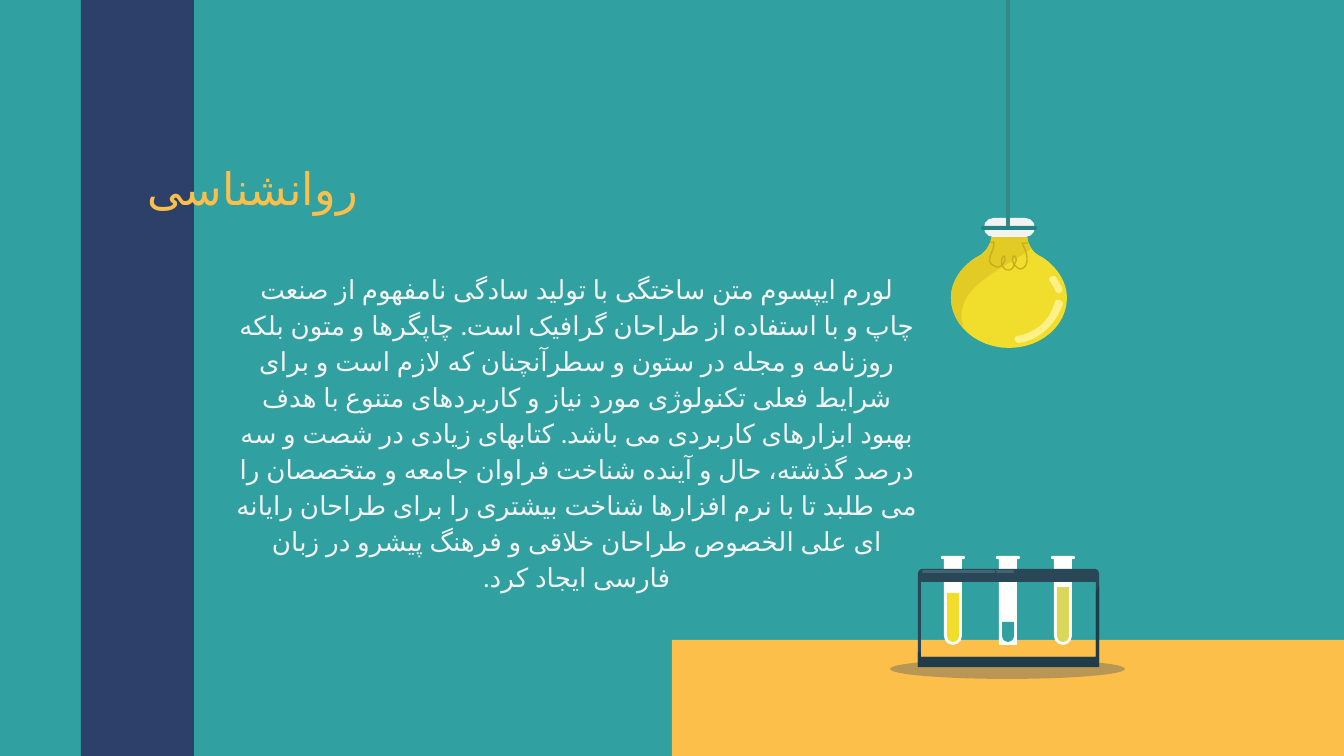
from lxml.etree import SubElement
from pptx import Presentation
from pptx.dml.color import RGBColor
from pptx.enum.lang import MSO_LANGUAGE_ID as LANGUAGE
from pptx.enum.shapes import MSO_CONNECTOR as CONNECTOR, MSO_SHAPE as SHAPE
from pptx.enum.text import MSO_ANCHOR as ANCHOR, MSO_AUTO_SIZE as AUTO_SIZE, PP_ALIGN as ALIGN
from pptx.oxml.ns import qn
from pptx.util import Emu, Inches, Pt

SCALE = 914400 / 134.4
CURVE_STEPS = 12

TEAL = RGBColor(0x30, 0xA0, 0xA0)
NAVY = RGBColor(0x2D, 0x40, 0x6A)
ORANGE = RGBColor(0xFC, 0xBF, 0x4A)
PALE = RGBColor(0xF3, 0xF3, 0xF3)
YELLOW = RGBColor(0xF1, 0xDE, 0x2C)
BULB_SHADE = RGBColor(0xE2, 0xCB, 0x24)
GLOSS = RGBColor(0xFF, 0xF1, 0x88)
FILAMENT = RGBColor(0xC4, 0xB0, 0x1E)
BAND = RGBColor(0x23, 0x84, 0x81)
CORD = RGBColor(0x33, 0x89, 0x87)
GLASS = RGBColor(0xFE, 0xFF, 0xFD)
OLIVE = RGBColor(0xDB, 0xD7, 0x5A)
RACK = RGBColor(0x2A, 0x47, 0x58)
RACK_DARK = RGBColor(0x20, 0x3C, 0x49)
RACK_LIGHT = RGBColor(0x44, 0x64, 0x75)

TITLE = "روانشناسی"
BODY = (
    "لورم ایپسوم متن ساختگی با تولید سادگی نامفهوم از صنعت چاپ و با استفاده از "
    "طراحان گرافیک است. چاپگرها و متون بلکه روزنامه و مجله در ستون و سطرآنچنان که "
    "لازم است و برای شرایط فعلی تکنولوژی مورد نیاز و کاربردهای متنوع با هدف بهبود "
    "ابزارهای کاربردی می باشد. کتابهای زیادی در شصت و سه درصد گذشته، حال و آینده "
    "شناخت فراوان جامعه و متخصصان را می طلبد تا با نرم افزارها شناخت بیشتری را برای "
    "طراحان رایانه ای علی الخصوص طراحان خلاقی و فرهنگ پیشرو در زبان فارسی ایجاد کرد."
)

# Outlines: a pair is a corner, six numbers are a Bézier curve.
BULB_LEFT = [(43, 15), (43, 25, 37, 35, 28, 39), (13, 48, 2, 63, 2, 80)]
BULB_OUTLINE = [(60, 130), (93, 130, 118, 107, 118, 80), (118, 63, 107, 48, 93, 39),
                (83, 35, 78, 25, 78, 15), *BULB_LEFT, (2, 107, 28, 130, 60, 130)]
SHADE_OUTLINE = [(15, 111), (0, 70, 54, 52, 82, 31), (79, 25, 78, 20, 78, 15),
                 *BULB_LEFT, (2, 92, 8, 102, 15, 111)]
LONG_GLOSS = [(70, 125), (91, 122, 107, 106, 114, 86), (114, 83, 111, 82, 110, 82),
              (109, 82, 107, 82, 106, 83), (102, 102, 87, 115, 68, 118),
              (64, 119, 66, 125, 70, 125)]
SHORT_GLOSS = [(110, 75), (113, 75, 114, 72, 113, 70), (111, 66, 109, 63, 107, 59),
               (106, 58, 105, 58, 105, 58), (102, 58, 99, 60, 101, 63),
               (103, 66, 105, 70, 107, 74), (107, 74, 108, 75, 110, 75)]
FILAMENT_WIRE = [(41, 24), (45, 24), (45, 28, 44, 32, 42, 36), (40, 42, 39, 46, 48, 49),
                 (50, 49, 52, 48, 53, 47), (52, 43, 53, 39, 55, 38),
                 (57, 39, 56, 45, 53, 47), (55, 51, 57, 52, 59, 52),
                 (62, 52, 65, 50, 65, 46), (63, 42, 63, 39, 65, 38),
                 (68, 39, 68, 44, 65, 46), (67, 49, 70, 51, 72, 51),
                 (80, 49, 80, 37, 73, 25), (79, 25)]
FRAME_OUTER = [(5, 13), (2, 13, 0, 15, 0, 18), (0, 111), (181, 111), (181, 18),
               (181, 15, 179, 13, 176, 13)]
FRAME_INNER = [(178, 26), (178, 101), (3, 101), (3, 26)]
FRAME_DARK = [(181, 30), (180, 31, 179, 33, 178, 35), (178, 101), (3, 101), (3, 96),
              (0, 96), (0, 111), (181, 111)]


def px(value):
    return Emu(round(value * SCALE))


def paint(shape, color):
    shape.shadow.inherit = False
    shape.fill.solid()
    shape.fill.fore_color.rgb = color
    shape.line.fill.background()
    return shape


def add_block(slide, kind, left, top, width, height, color, adjustments=()):
    block = slide.shapes.add_shape(kind, px(left), px(top), px(width), px(height))
    for index, value in enumerate(adjustments):
        block.adjustments[index] = value
    return paint(block, color)


def trace(outline):
    """Turn corners and curves into a list of points in EMU."""
    points = [outline[0]]
    for step in outline[1:]:
        if len(step) == 2:
            points.append(step)
            continue
        controls = [points[-1], step[:2], step[2:4], step[4:]]
        for index in range(1, CURVE_STEPS + 1):
            t = index / CURVE_STEPS
            weights = ((1 - t) ** 3, 3 * t * (1 - t) ** 2, 3 * t * t * (1 - t), t ** 3)
            points.append(tuple(sum(w * c[axis] for w, c in zip(weights, controls))
                                for axis in (0, 1)))
    return [(px(x), px(y)) for x, y in points]


def add_outline(slide, left, top, *outlines, closed=True):
    first, *others = [trace(outline) for outline in outlines]
    builder = slide.shapes.build_freeform(*first[0])
    builder.add_line_segments(first[1:], close=closed)
    for points in others:
        builder.move_to(*points[0])
        builder.add_line_segments(points[1:], close=closed)
    return builder.convert_to_shape(px(left), px(top))


def write(shape, text, size, font_name, color, align, anchor):
    frame = shape.text_frame
    frame_format = dict(word_wrap=True, auto_size=AUTO_SIZE.NONE, vertical_anchor=anchor)
    frame_format.update({f"margin_{side}": Inches(0.1)
                         for side in ("left", "top", "right", "bottom")})
    for name, value in frame_format.items():
        setattr(frame, name, value)
    paragraph = frame.paragraphs[0]
    paragraph.alignment = align
    run = paragraph.add_run()
    run.text = text
    font_format = dict(size=Pt(size), name=font_name, bold=False, language_id=LANGUAGE.FARSI)
    for name, value in font_format.items():
        setattr(run.font, name, value)
    run.font.color.rgb = color
    SubElement(run.font._element, qn("a:cs"), typeface=font_name)
    return paragraph


def place_title(slide, left, top, width, height):
    title = slide.shapes.title
    box = dict(left=left, top=top, width=width, height=height)
    for name, value in box.items():
        setattr(title, name, px(value))
    write(title, TITLE, 24, "Roboto", ORANGE, ALIGN.LEFT, ANCHOR.BOTTOM)


def place_body(slide, left, top, width, height):
    body = slide.shapes.add_textbox(px(left), px(top), px(width), px(height))
    paragraph = write(body, BODY, 14, "Lato", PALE, ALIGN.CENTER, ANCHOR.TOP)
    paragraph.line_spacing = 1.15
    paragraph._p.get_or_add_pPr().set("rtl", "1")


def place_bulb(slide, left, top):
    """Hang the bulb from the top edge of the slide."""
    for outline, color in ((BULB_OUTLINE, YELLOW), (SHADE_OUTLINE, BULB_SHADE),
                           (LONG_GLOSS, GLOSS), (SHORT_GLOSS, GLOSS)):
        paint(add_outline(slide, left, top, outline), color)
    add_block(slide, SHAPE.ROUNDED_RECTANGLE, left + 35, top, 51, 19, PALE, [0.5])
    add_block(slide, SHAPE.ROUNDED_RECTANGLE, left + 32, top + 8, 56, 4, BAND, [0.5])

    wire = add_outline(slide, left, top, FILAMENT_WIRE, closed=False)
    wire.shadow.inherit = False
    wire.fill.background()
    wire.line.color.rgb = FILAMENT
    wire.line.width = Pt(0.75)

    x = px(left + 59)
    cord = slide.shapes.add_connector(CONNECTOR.STRAIGHT, x, 0, x, px(top + 8))
    cord.line.color.rgb = CORD
    cord.line.width = Pt(2.25)
    SubElement(cord._element.spPr, qn("a:effectLst"))


def place_tube(slide, left, top, level, liquid, roundness):
    add_block(slide, SHAPE.ROUND_2_SAME_RECTANGLE, left, top + 2, 18, 87, GLASS,
              [0, roundness])
    add_block(slide, SHAPE.ROUND_2_SAME_RECTANGLE, left + 3, top + level, 12, 86 - level,
              liquid, [0, 0.5])
    add_block(slide, SHAPE.ROUNDED_RECTANGLE, left - 3, top, 24, 3, GLASS, [0.5])


def place_rack(slide, left, top):
    tubes = ((37, YELLOW, 0.5), (66, TEAL, 0.04), (31, OLIVE, 0.5))
    for index, tube in enumerate(tubes):
        place_tube(slide, left + 26 + index * 55, top, *tube)
    paint(add_outline(slide, left, top, FRAME_OUTER, FRAME_INNER), RACK)
    paint(add_outline(slide, left, top, FRAME_DARK), RACK_DARK)
    for x, width in ((4, 73), (78, 18)):
        add_block(slide, SHAPE.ROUNDED_RECTANGLE, left + x, top + 14, width, 3,
                  RACK_LIGHT, [0.5])


def place_desk(slide, left, top, width, height):
    add_block(slide, SHAPE.RECTANGLE, left, top, width, height, ORANGE)
    shadow = add_block(slide, SHAPE.OVAL, left + 218, top + 19, 235, 20, NAVY)
    color = shadow.fill._xPr.find(qn("a:solidFill")).find(qn("a:srgbClr"))
    SubElement(color, qn("a:alpha"), val="32000")


def main():
    deck = Presentation()
    deck.slide_width, deck.slide_height = px(1344), px(756)
    slide = deck.slides.add_slide(deck.slide_layouts[5])
    slide.background.fill.solid()
    slide.background.fill.fore_color.rgb = TEAL

    stripe = add_block(slide, SHAPE.RECTANGLE, 81, 0, 113, 756, NAVY)
    slide.shapes.title._element.addprevious(stripe._element)
    place_desk(slide, 672, 640, 672, 116)
    place_title(slide, 134, 157, 311, 71)
    place_bulb(slide, 949, 218)
    place_rack(slide, 918, 556)
    place_body(slide, 223, 255, 708, 216)
    deck.save("out.pptx")


if __name__ == "__main__":
    main()
